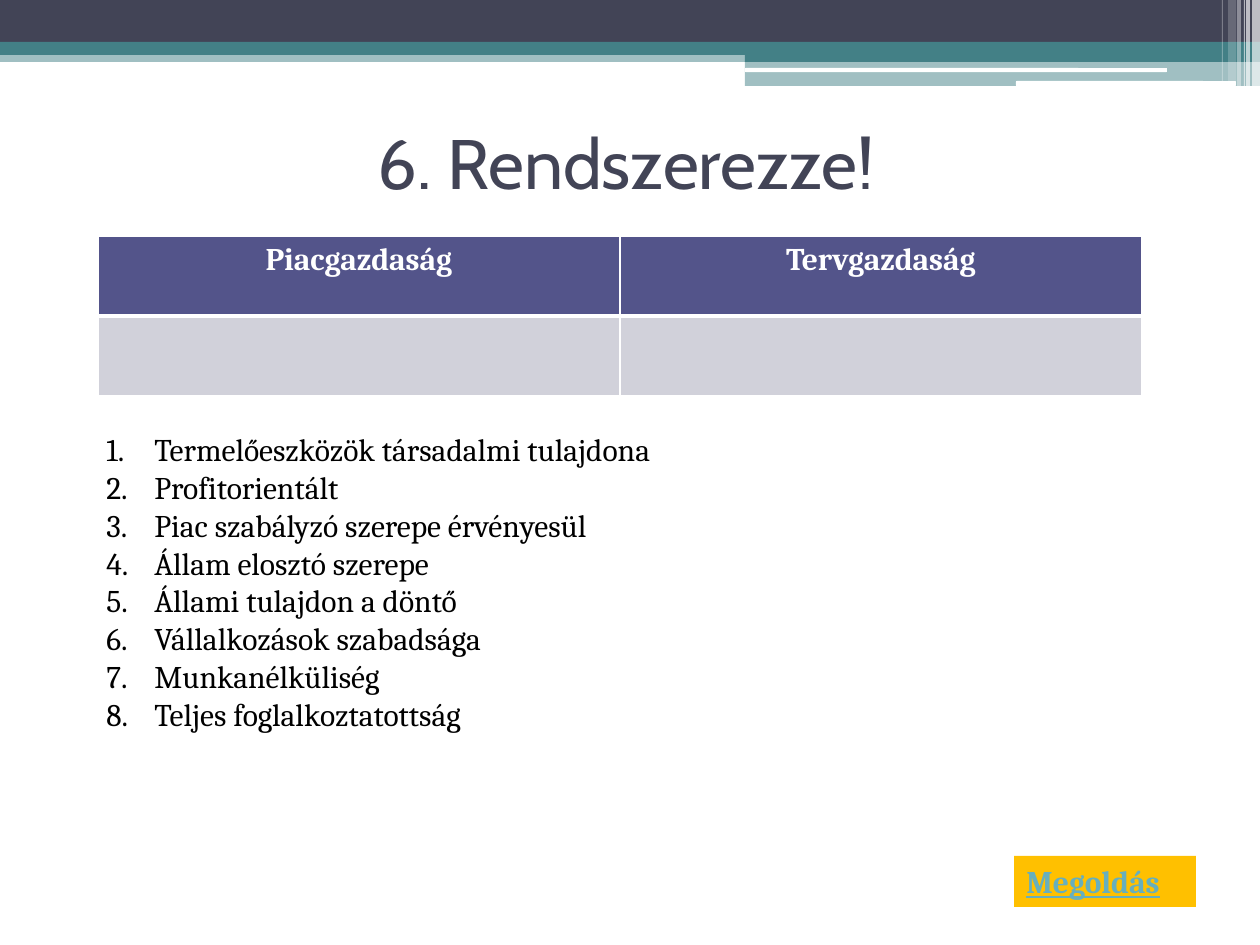
from lxml import etree
from pptx import Presentation
from pptx import util as u
from pptx.dml.color import RGBColor
from pptx.enum import shapes, text
from pptx.oxml import ns

RECT = shapes.MSO_SHAPE.RECTANGLE
ROUND = shapes.MSO_SHAPE.ROUNDED_RECTANGLE
NAVY, TEAL, WHITE = "424456", "438086", "FFFFFF"

BANDS = [
    (0, 50, 1260, 12, TEAL, 50),
    (0, 0, 1260, 43, NAVY, 100),
    (0, 42, 1260, 13, TEAL, 100),
    (745, 49, 515, 13, TEAL, 100),
    (745, 61, 515, 25, TEAL, 50),
]
LINES = [(745, 68, 422, 4), (1016, 81, 220, 5)]
STRIPES = [
    (1252, 8, 86, 65),
    (1246, 4, 86, 65),
    (1244, 1, 86, 60),
    (1237, 4, 86, 40),
    (1228, 8, 81, 20),
    (1222, 1, 81, 30),
]
HEADERS = ["Piacgazdaság", "Tervgazdaság"]
FEATURES = [
    "Termelőeszközök társadalmi tulajdona",
    "Profitorientált",
    "Piac szabályzó szerepe érvényesül",
    "Állam elosztó szerepe",
    "Állami tulajdon a döntő",
    "Vállalkozások szabadsága",
    "Munkanélküliség",
    "Teljes foglalkoztatottság",
]


def px(n):
    return u.Emu(round(n * 914400 / 126))


def rgb(value):
    return RGBColor.from_string(value)


def child(parent, tag, **attrs):
    return etree.SubElement(parent, ns.qn(tag), {k: str(v) for k, v in attrs.items()})


def write(p, words, size=18, font="Cambria", color="000000", bold=False,
          underline=False, align=text.PP_ALIGN.LEFT):
    p.alignment = align
    r = p.add_run()
    r.text = words
    f = r.font
    f.size, f.name, f.bold, f.underline = u.Pt(size), font, bold, underline
    f.color.rgb = rgb(color)


class Deck:
    def __init__(self):
        self.prs = Presentation()
        self.prs.slide_width, self.prs.slide_height = px(1260), px(945)
        self.s = self.prs.slides.add_slide(self.prs.slide_layouts[6])

    def shape(self, x, y, w, h, color, alpha=100, kind=RECT):
        sp = self.s.shapes.add_shape(kind, px(x), px(y), px(w), px(h))
        sp.shadow.inherit = False
        sp.line.fill.background()
        sp.fill.solid()
        sp.fill.fore_color.rgb = rgb(color)
        if alpha < 100:
            fill = sp.fill._xPr.find(ns.qn("a:solidFill"))
            child(fill[0], "a:alpha", val=alpha * 1000)
        return sp

    def textbox(self, x, y, w, h, anchor=text.MSO_ANCHOR.TOP):
        tf = self.s.shapes.add_textbox(px(x), px(y), px(w), px(h)).text_frame
        tf.word_wrap = True
        tf.vertical_anchor = anchor
        return tf

    def title(self, words, x, y, w, h):
        tf = self.textbox(x, y, w, h, text.MSO_ANCHOR.MIDDLE)
        write(tf.paragraphs[0], words, size=40, font="Cabin", color=NAVY,
              align=text.PP_ALIGN.CENTER)

    def numbered(self, items, x, y, w, h):
        tf = self.textbox(x, y, w, h)
        for i, item in enumerate(items):
            p = tf.add_paragraph() if i else tf.paragraphs[0]
            write(p, item)
            pPr = p._p.get_or_add_pPr()
            pPr.set("marL", str(px(48)))
            pPr.set("indent", str(-px(48)))
            child(pPr, "a:buAutoNum", type="arabicPeriod")

    def button(self, words, x, y, w, h):
        tf = self.shape(x, y, w, h, "FFC000").text_frame
        tf.word_wrap = False
        tf.vertical_anchor = text.MSO_ANCHOR.TOP
        write(tf.paragraphs[0], words, color="67AFBD", bold=True, underline=True)

    def cell(self, c, words, color, edges):
        tcPr = c._tc.get_or_add_tcPr()
        for side, width in edges.items():
            ln = child(tcPr, f"a:ln{side}", w=u.Pt(width))
            child(child(ln, "a:solidFill"), "a:srgbClr", val=WHITE)
        c.fill.solid()
        c.fill.fore_color.rgb = rgb(color)
        p = c.text_frame.paragraphs[0]
        if words:
            write(p, words, color=WHITE, bold=True, align=text.PP_ALIGN.CENTER)
        else:
            p.font.size = u.Pt(18)

    def table(self, headers, x, y, w, h):
        t = self.s.shapes.add_table(2, len(headers), px(x), px(y), px(w), px(h)).table
        for i, words in enumerate(headers):
            self.cell(t.cell(0, i), words, "53548A", dict(L=1, R=1, T=1, B=3))
            self.cell(t.cell(1, i), "", "D1D1DA", dict(L=1, R=1, T=3, B=1))


def main():
    deck = Deck()
    for band in BANDS:
        deck.shape(*band)
    for line in LINES:
        deck.shape(*line, WHITE, kind=ROUND)
    for x, w, h, alpha in STRIPES:
        deck.shape(x, 0, w, h, WHITE, alpha)
    deck.title("6. Rendszerezze!", 59, 88, 1134, 148)
    deck.button("Megoldás", 1014, 856, 182, 51)
    deck.table(HEADERS, 98, 236, 1044, 160)
    deck.numbered(FEATURES, 94, 424, 883, 318)
    deck.prs.save("out.pptx")


if __name__ == "__main__":
    main()
